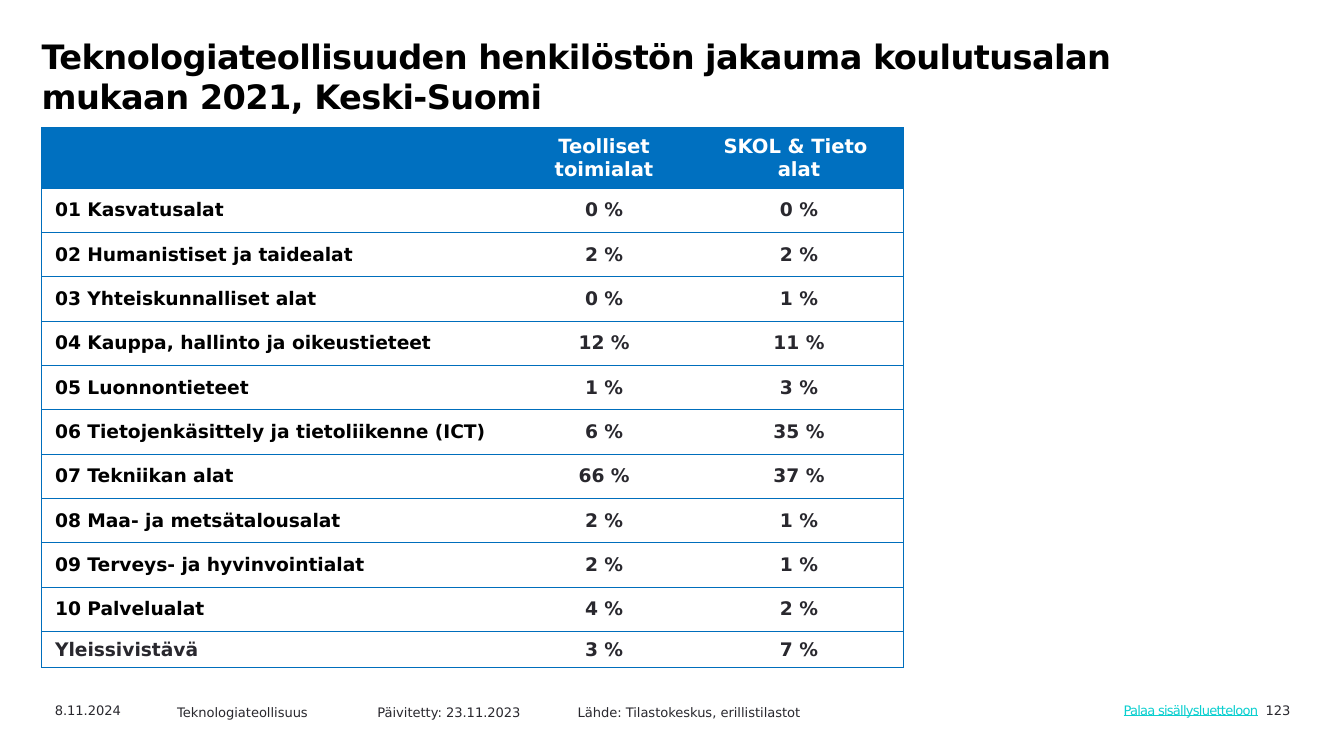
"""Build a slide with a table of personnel shares by field of education."""
from lxml import etree
from pptx import Presentation
from pptx import util as u
from pptx.dml.color import RGBColor
from pptx.enum import text
from pptx.oxml import ns

TITLE = "Teknologiateollisuuden henkilöstön jakauma koulutusalan mukaan 2021, Keski-Suomi"
HEADER = ("", "Teolliset toimialat", "SKOL & Tieto \nalat")
ROWS = [
    ("01 Kasvatusalat", 0, 0),
    ("02 Humanistiset ja taidealat", 2, 2),
    ("03 Yhteiskunnalliset alat", 0, 1),
    ("04 Kauppa, hallinto ja oikeustieteet", 12, 11),
    ("05 Luonnontieteet", 1, 3),
    ("06 Tietojenkäsittely ja tietoliikenne (ICT)", 6, 35),
    ("07 Tekniikan alat", 66, 37),
    ("08 Maa- ja metsätalousalat", 2, 1),
    ("09 Terveys- ja hyvinvointialat", 2, 1),
    ("10 Palvelualat", 4, 2),
    ("Yleissivistävä", 3, 7),
]
FOOTER = ("Teknologiateollisuus", "Päivitetty: 23.11.2023", "Lähde: Tilastokeskus, erillistilastot")
DATE, LINK, NUMBER = "8.11.2024", "Palaa sisällysluetteloon", "123"

THEME = {
    "font": "DejaVu Sans",
    "black": "000000", "ink": "29282E", "white": "FFFFFF",
    "header": "0070C0", "line": "006EBC", "link": "0ACFCF",
    "title_size": 18, "header_size": 10.5, "cell_size": 10, "small_size": 7,
}
SLIDE_W, SLIDE_H = 10, 10 * 9 / 16
TABLE_LEFT, TABLE_TOP = 0.31, 0.95
COLS = (3.51, 1.35, 1.55)
HEIGHTS = [0.45] + [0.33] * (len(ROWS) - 1) + [0.27]
TAB = 1.49
LEFT, CENTER, RIGHT = text.PP_ALIGN.LEFT, text.PP_ALIGN.CENTER, text.PP_ALIGN.RIGHT


def style(tf, size, color, align=LEFT, bold=False, underline=None, spacing=0):
    for p in tf.paragraphs:
        p.alignment = align
        for r in p.runs:
            f = r.font
            f.name, f.size, f.bold, f.underline = THEME["font"], u.Pt(size), bold, underline
            f.color.rgb = RGBColor.from_string(THEME[color])
            if spacing:
                r._r.get_or_add_rPr().set("spc", str(round(spacing * 100)))


def place(sp, x, y, w, h):
    sp.left, sp.top, sp.width, sp.height = map(u.Inches, (x, y, w, h))


def add_label(s, words, box, color="ink", inset=0.1, **look):
    sp = s.shapes.add_textbox(0, 0, 0, 0)
    place(sp, *box)
    tf = sp.text_frame
    tf.text = words
    tf.word_wrap = True
    tf.vertical_anchor = text.MSO_ANCHOR.MIDDLE
    tf.margin_left = tf.margin_right = u.Inches(inset)
    tf.margin_top = tf.margin_bottom = 0
    style(tf, THEME["small_size"], color, **look)
    return tf


def set_borders(cell, drawn):
    tcPr = cell._tc.get_or_add_tcPr()
    for side in "LRTB":
        ln = etree.SubElement(tcPr, ns.qn(f"a:ln{side}"), w=str(u.Pt(0.75)))
        if side in drawn:
            fill = etree.SubElement(ln, ns.qn("a:solidFill"))
            etree.SubElement(fill, ns.qn("a:srgbClr"), val=THEME["line"])
        else:
            etree.SubElement(ln, ns.qn("a:noFill"))


def add_title(s):
    sp = s.shapes.title
    place(sp, 0.21, 0.23, 8.79, 0.67)
    tf = sp.text_frame
    tf.text = TITLE
    tf.word_wrap = True
    tf.auto_size = text.MSO_AUTO_SIZE.NONE
    tf.vertical_anchor = text.MSO_ANCHOR.MIDDLE
    style(tf, THEME["title_size"], "black", bold=True, spacing=-0.3)


def add_shares(s):
    records = [HEADER] + [(name, f"{a} %", f"{b} %") for name, a, b in ROWS]
    box = map(u.Inches, (TABLE_LEFT, TABLE_TOP, sum(COLS), sum(HEIGHTS)))
    table = s.shapes.add_table(len(records), len(COLS), *box).table
    table.horz_banding = False
    for column, w in zip(table.columns, COLS):
        column.width = u.Inches(w)
    for i, (row, h, record) in enumerate(zip(table.rows, HEIGHTS, records)):
        row.height = u.Inches(h)
        for j, (cell, words) in enumerate(zip(row.cells, record)):
            cell.text = words
            cell.vertical_anchor = text.MSO_ANCHOR.MIDDLE
            set_borders(cell, "TB" + {0: "L", len(COLS) - 1: "R"}.get(j, ""))
            cell.fill.solid()
            cell.fill.fore_color.rgb = RGBColor.from_string(THEME["white" if i else "header"])
            numbered = j == 0 and i < len(records) - 1
            color = "white" if i == 0 else "black" if numbered else "ink"
            size = THEME["cell_size" if i else "header_size"]
            style(cell.text_frame, size, color, CENTER if j else LEFT, bold=True)


def add_footer(s):
    y, h = SLIDE_H * 0.923, SLIDE_H * 0.032
    add_label(s, DATE, (TABLE_LEFT, y, 1, h))
    add_label(s, NUMBER, (8.76, y, 0.94, h), align=RIGHT)
    tf = add_label(s, "\t".join(FOOTER), (1.22, y + 0.02, 5.23, h))
    tabs = etree.SubElement(tf.paragraphs[0]._p.get_or_add_pPr(), ns.qn("a:tabLst"))
    for n in range(1, len(FOOTER)):
        etree.SubElement(tabs, ns.qn("a:tab"), pos=str(u.Inches(TAB * n)), algn="l")
    add_label(s, LINK, (8.32, y, 1.22, h), "link", 0.04, underline=True, spacing=-0.4)


def main():
    prs = Presentation()
    prs.slide_width, prs.slide_height = u.Inches(SLIDE_W), u.Inches(SLIDE_H)
    s = prs.slides.add_slide(prs.slide_layouts[5])
    add_title(s)
    add_shares(s)
    add_footer(s)
    prs.save("out.pptx")


if __name__ == "__main__":
    main()
